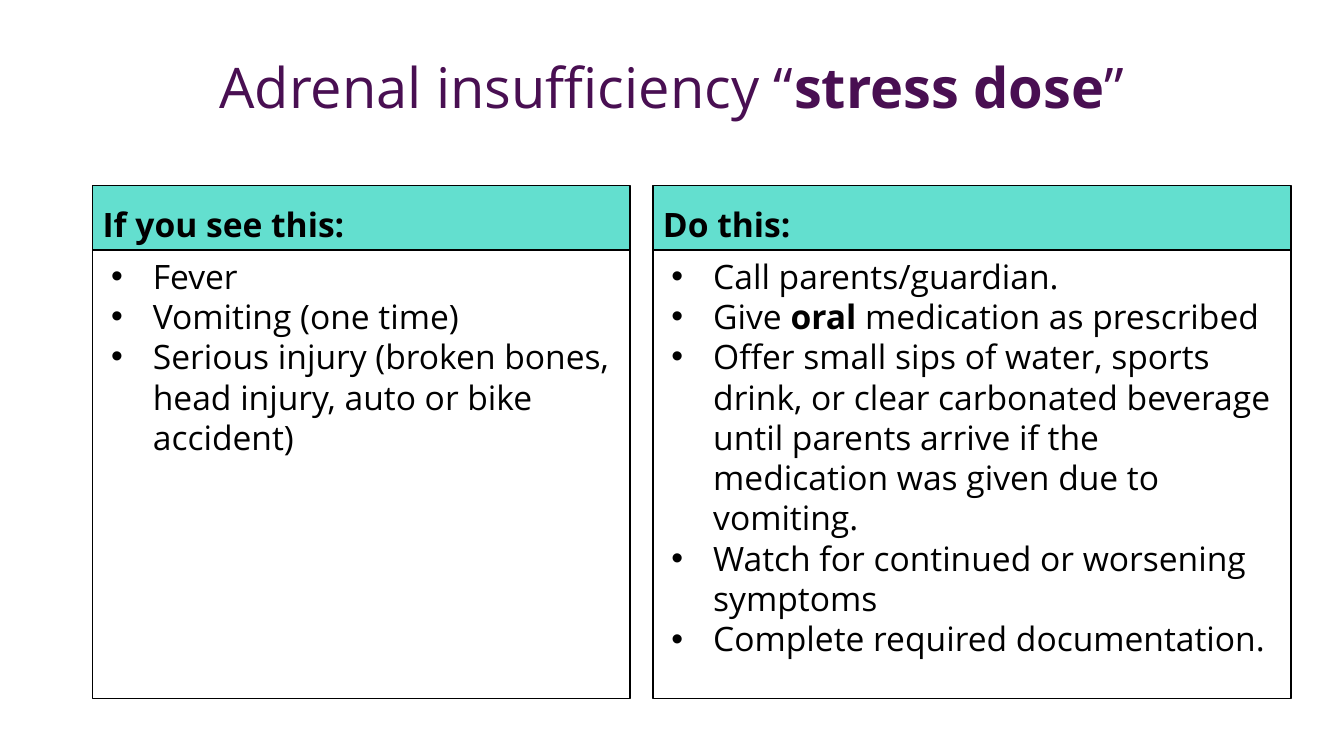
from lxml import etree
from pptx import Presentation
from pptx.dml.color import RGBColor
from pptx.enum.shapes import MSO_SHAPE as Shape
from pptx.enum.text import MSO_ANCHOR as Anchor, PP_ALIGN as Align
from pptx.oxml.ns import qn
from pptx.util import Cm, Pt

PURPLE = RGBColor(0x49, 0x0F, 0x52)
TURQUOISE = RGBColor(0x63, 0xDF, 0xCF)
BLACK = RGBColor(0, 0, 0)

LEFT_MARGIN, HEADING_TOP, HEADING_HEIGHT = Cm(1.75), Cm(3.51), Cm(1.22)
ADVICE_HEIGHT = Cm(8.48)
COLUMN_GAP = Cm(0.43)

# Each line is a list of text pieces; every second piece is bold.
COLUMNS = [
    ("If you see this:", Cm(10.16), [
        ["Fever"],
        ["Vomiting (one time)"],
        ["Serious injury (broken bones, head injury, auto or bike accident)"],
    ]),
    ("Do this:", Cm(12.06), [
        ["Call parents/guardian."],
        ["Give ", "oral", " medication as prescribed"],
        ["Offer small sips of water, sports drink, or clear carbonated beverage "
         "until parents arrive if the medication was given due to vomiting."],
        ["Watch for continued or worsening symptoms"],
        ["Complete required documentation."],
    ]),
]


def prepare_frame(shape, anchor):
    frame = shape.text_frame
    frame.word_wrap = True
    frame.vertical_anchor = anchor
    frame.margin_left = frame.margin_right = Cm(0.19)
    frame.margin_top = frame.margin_bottom = Cm(0.1)
    return frame


def write_line(paragraph, pieces, size, color, align=Align.LEFT):
    """Fill a paragraph with pieces that alternate between regular and bold."""
    paragraph.alignment = align
    font = paragraph.font
    font.name, font.size, font.color.rgb = "Open Sans", Pt(size), color
    for index, piece in enumerate(pieces):
        run = paragraph.add_run()
        run.text = piece
        if index % 2:
            run.font.bold = True


deck = Presentation()
deck.slide_width, deck.slide_height = Cm(25.4), Cm(14.29)
slide = deck.slides.add_slide(deck.slide_layouts[6])

title = slide.shapes.add_textbox(LEFT_MARGIN, Cm(0.76), Cm(21.9), Cm(1.9))
title_line = prepare_frame(title, Anchor.MIDDLE).paragraphs[0]
write_line(title_line, ["Adrenal insufficiency “", "stress dose", "”"], 30, PURPLE, Align.CENTER)
title_line.line_spacing = 0.9

left = LEFT_MARGIN
for heading_text, width, advice_lines in COLUMNS:
    heading = slide.shapes.add_shape(Shape.RECTANGLE, left, HEADING_TOP, width, HEADING_HEIGHT)
    advice = slide.shapes.add_shape(
        Shape.RECTANGLE, left, HEADING_TOP + HEADING_HEIGHT, width, ADVICE_HEIGHT)
    for box in (heading, advice):
        box.shadow.inherit = False
        box.line.color.rgb = BLACK
        box.line.width = Pt(0.75)
    heading.fill.solid()
    heading.fill.fore_color.rgb = TURQUOISE
    advice.fill.background()

    heading_line = prepare_frame(heading, Anchor.BOTTOM).paragraphs[0]
    write_line(heading_line, [heading_text], 18, BLACK)
    heading_line.font.bold = True
    heading_line.line_spacing = 0.9
    heading_line.space_before = Pt(7.5)

    advice_frame = prepare_frame(advice, Anchor.TOP)
    for number, pieces in enumerate(advice_lines):
        line = advice_frame.add_paragraph() if number else advice_frame.paragraphs[0]
        write_line(line, pieces, 18, BLACK)
        properties = line._p.get_or_add_pPr()
        properties.set("marL", str(Cm(0.95)))
        properties.set("indent", str(-Cm(0.79)))
        bullet_font = etree.Element(qn("a:buFont"), typeface="Arial")
        bullet = etree.Element(qn("a:buChar"), char="•")
        properties.find(qn("a:defRPr")).addprevious(bullet_font)
        bullet_font.addnext(bullet)

    left += width + COLUMN_GAP

deck.save("out.pptx")
